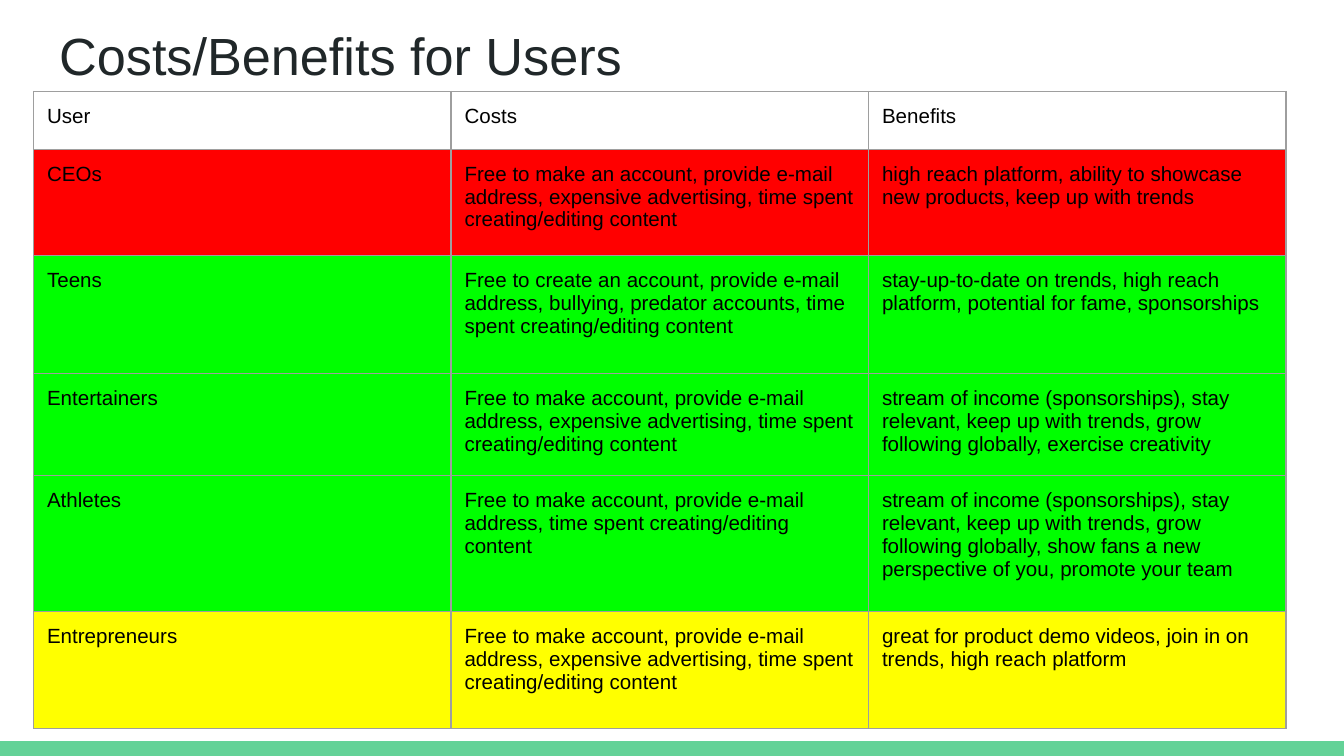
from lxml.etree import SubElement
from pptx import Presentation
from pptx.dml.color import RGBColor
from pptx.enum.shapes import MSO_SHAPE
from pptx.enum.text import MSO_ANCHOR, MSO_AUTO_SIZE, PP_ALIGN
from pptx.oxml.ns import qn
from pptx.util import Inches, Pt

SLIDE_WIDTH = 10
SLIDE_HEIGHT = SLIDE_WIDTH * 9 / 16
FONT = "Arial"
GREY, RED, GREEN, YELLOW = "9E9E9E", "FF0000", "00FF00", "FFFF00"
TABLE_WIDTH = 9.32
INSET = 0.1

ROWS = [
    (0.43, None, ("User", "Costs", "Benefits")),
    (0.79, RED, (
        "CEOs",
        "Free to make an account, provide e-mail address, expensive advertising, time spent creating/editing content",
        "high reach platform, ability to showcase new products, keep up with trends")),
    (0.88, GREEN, (
        "Teens",
        "Free to create an account, provide e-mail address, bullying, predator accounts, time spent creating/editing content",
        "stay-up-to-date on trends, high reach platform, potential for fame, sponsorships")),
    (0.76, GREEN, (
        "Entertainers",
        "Free to make account, provide e-mail address, expensive advertising, time spent creating/editing content",
        "stream of income (sponsorships), stay relevant, keep up with trends, grow following globally, exercise creativity")),
    (1.01, GREEN, (
        "Athletes",
        "Free to make account, provide e-mail address, time spent creating/editing content",
        "stream of income (sponsorships), stay relevant, keep up with trends, grow following globally, show fans a new perspective of you, promote your team")),
    (0.87, YELLOW, (
        "Entrepreneurs",
        "Free to make account, provide e-mail address, expensive advertising, time spent creating/editing content",
        "great for product demo videos, join in on trends, high reach platform")),
]


def color(value):
    return RGBColor.from_string(value)


def format_text(text_frame, size, text_color):
    for paragraph in text_frame.paragraphs:
        paragraph.alignment = PP_ALIGN.LEFT
        for run in paragraph.runs:
            run.font.name = FONT
            run.font.size = Pt(size)
            run.font.color.rgb = color(text_color)


def set_insets(target):
    target.margin_left = target.margin_right = Inches(INSET)
    target.margin_top = target.margin_bottom = Inches(INSET)


def add_footer_band(slide):
    height = 0.11
    band = slide.shapes.add_shape(
        MSO_SHAPE.RECTANGLE, 0, Inches(SLIDE_HEIGHT - height),
        Inches(SLIDE_WIDTH), Inches(height))
    band.shadow.inherit = False
    band.fill.solid()
    band.fill.fore_color.rgb = color("63D297")
    band.line.fill.background()


def set_title(slide, text):
    title = slide.shapes.title
    title.left, title.top = Inches(0.34), Inches(0.07)
    title.width, title.height = Inches(9.32), Inches(0.63)
    text_frame = title.text_frame
    text_frame.text = text
    text_frame.word_wrap = True
    text_frame.auto_size = MSO_AUTO_SIZE.NONE
    text_frame.vertical_anchor = MSO_ANCHOR.TOP
    set_insets(text_frame)
    format_text(text_frame, 28, "202729")


def set_borders(cell):
    properties = cell._tc.get_or_add_tcPr()
    for tag in ("a:lnL", "a:lnR", "a:lnT", "a:lnB"):
        line = SubElement(properties, qn(tag), w=str(Pt(0.75)))
        fill = SubElement(line, qn("a:solidFill"))
        SubElement(fill, qn("a:srgbClr"), val=GREY)


def format_cell(cell, text, fill):
    cell.text_frame.text = text
    cell.vertical_anchor = MSO_ANCHOR.TOP
    set_insets(cell)
    format_text(cell.text_frame, 11, "000000")
    set_borders(cell)
    if fill:
        cell.fill.solid()
        cell.fill.fore_color.rgb = color(fill)
    else:
        cell.fill.background()


def add_user_table(slide):
    column_count = len(ROWS[0][2])
    table = slide.shapes.add_table(
        len(ROWS), column_count, Inches(0.25), Inches(0.68),
        Inches(TABLE_WIDTH),
        Inches(sum(height for height, _, _ in ROWS))).table
    table.first_row = table.horz_banding = False
    for column in table.columns:
        column.width = Inches(TABLE_WIDTH / column_count)
    for row, (height, fill, texts) in enumerate(ROWS):
        table.rows[row].height = Inches(height)
        for column, text in enumerate(texts):
            format_cell(table.cell(row, column), text, fill)


def main():
    presentation = Presentation()
    presentation.slide_width = Inches(SLIDE_WIDTH)
    presentation.slide_height = Inches(SLIDE_HEIGHT)
    slide = presentation.slides.add_slide(presentation.slide_layouts[5])
    add_footer_band(slide)
    set_title(slide, "Costs/Benefits for Users")
    add_user_table(slide)
    presentation.save("out.pptx")


if __name__ == "__main__":
    main()
